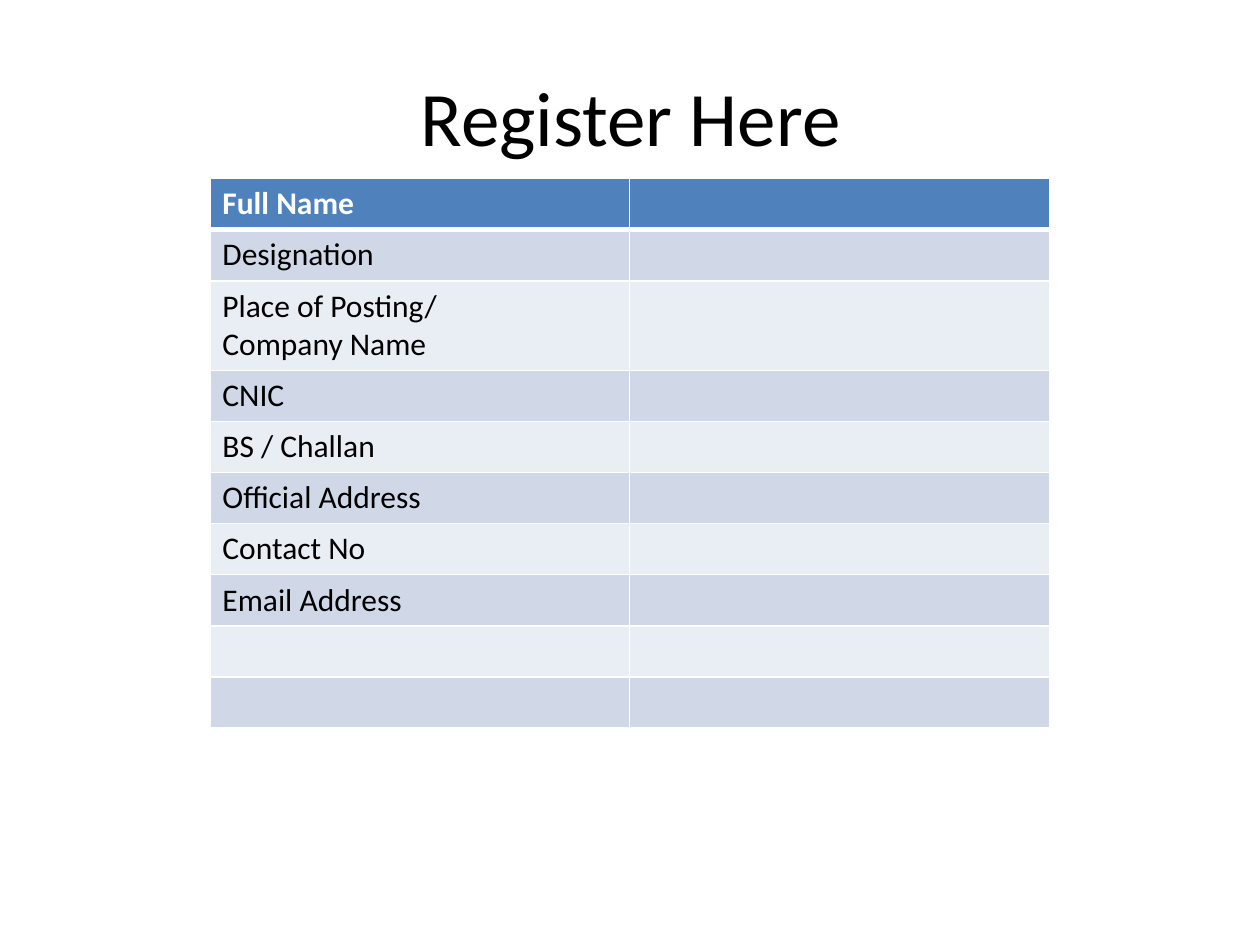
from lxml.etree import SubElement
from pptx import Presentation
from pptx.dml.color import RGBColor
from pptx.enum.text import MSO_ANCHOR, PP_ALIGN
from pptx.oxml.ns import qn
from pptx.util import Cm, Pt

FONT = "Calibri"
LABELS = [
    ["Full Name"], ["Designation"], ["Place of Posting/", "Company Name"],
    ["CNIC"], ["BS / Challan"], ["Official Address"], ["Contact No"],
    ["Email Address"], [], [],
]


def paint(color, value):
    """Set a color from a hex string."""
    color.rgb = RGBColor.from_string(value)


def write(para, text, size, value, bold=False):
    """Add one formatted run to a paragraph."""
    run = para.add_run()
    run.text = text
    run.font.name = FONT
    run.font.size = Pt(size)
    run.font.bold = bold
    paint(run.font.color, value)


def edge(cell, side, width, value):
    """Draw one border of a cell."""
    line = SubElement(cell._tc.get_or_add_tcPr(), qn(f"a:ln{side}"), w=str(Pt(width)))
    fill = SubElement(line, qn("a:solidFill"))
    SubElement(fill, qn("a:srgbClr"), val=value)


def style(cell, row):
    """Give a cell its borders and its banded fill."""
    widths = {"L": 1, "R": 1, "T": 3 if row == 1 else 1, "B": 3 if row == 0 else 1}
    for side, width in widths.items():
        edge(cell, side, width, "FFFFFF")
    cell.fill.solid()
    band = "D0D8E8" if row % 2 else "E9EDF4"
    paint(cell.fill.fore_color, band if row else "4F81BD")


def head(slide, left, top, width, height):
    """Place and fill the title."""
    title = slide.shapes.title
    title.left, title.top, title.width, title.height = left, top, width, height
    frame = title.text_frame
    frame.vertical_anchor = MSO_ANCHOR.MIDDLE
    para = frame.paragraphs[0]
    para.alignment = PP_ALIGN.CENTER
    write(para, "Register Here", 44, "000000")


def form(slide, left, top, width, height):
    """Build the two-column form, with taller rows for longer labels."""
    extra = Cm(0.77)
    tall = sum(len(lines) > 1 for lines in LABELS)
    base = (height - tall * extra) // len(LABELS)
    table = slide.shapes.add_table(len(LABELS), 2, left, top, width, height).table
    for row, lines in enumerate(LABELS):
        table.rows[row].height = base + extra * (len(lines) > 1)
        for cell in table.rows[row].cells:
            style(cell, row)
            cell.text_frame.paragraphs[0].font.size = Pt(18)
        frame = table.cell(row, 0).text_frame
        for index, text in enumerate(lines):
            para = frame.add_paragraph() if index else frame.paragraphs[0]
            write(para, text, 18, "000000" if row else "FFFFFF", row == 0)


def main():
    """Build and save the slide."""
    deck = Presentation()
    deck.slide_width, deck.slide_height = Cm(25.4), Cm(19.05)
    slide = deck.slides.add_slide(deck.slide_layouts[5])
    head(slide, Cm(6.15), Cm(1.27), Cm(13.13), Cm(2.13))
    form(slide, Cm(4.23), Cm(3.6), Cm(16.93), Cm(11.07))
    deck.save("out.pptx")


if __name__ == "__main__":
    main()
